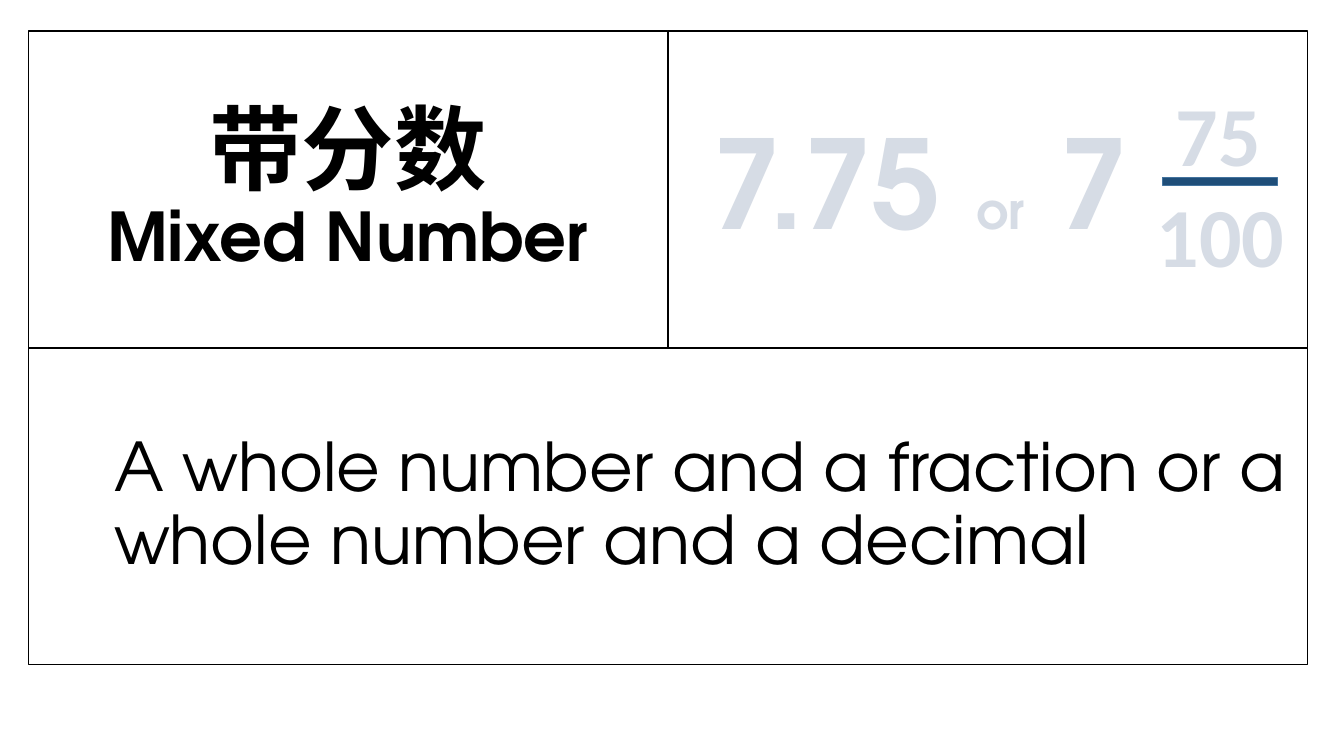
"""Build a vocabulary card for the term "mixed number"."""
from pptx import Presentation
from pptx.dml.color import RGBColor
from pptx.enum.shapes import MSO_SHAPE
from pptx.enum.text import MSO_ANCHOR, MSO_AUTO_SIZE, PP_ALIGN
from pptx.util import Pt

SCALE = 914400 / 100.8
BLACK = RGBColor(0x00, 0x00, 0x00)
PALE = RGBColor(0xD6, 0xDC, 0xE5)
NAVY = RGBColor(0x1F, 0x4E, 0x79)
BLUE = RGBColor(0x43, 0x73, 0x9E)
SANS, GEO = "Calibri", "TeX Gyre Adventor"
LEFT, TOP, WIDE, HIGH = 28, 31, 640, 317


def px(num):
    return round(num * SCALE)


def write(para, runs, color, bold, dent, align, lead):
    props = para._p.get_or_add_pPr()
    props.set("marL", str(px(dent)))
    props.set("indent", "0")
    form = {"alignment": align, "line_spacing": lead, "space_before": Pt(0)}
    for key, value in form.items():
        setattr(para, key, value)
    for text, size, face in runs:
        if text == "\n":
            para.add_line_break()
            continue
        run = para.add_run()
        run.text = text
        look = {"size": Pt(size), "name": face, "bold": bold}
        for key, value in look.items():
            setattr(run.font, key, value)
        run.font.color.rgb = color


deck = Presentation()
deck.slide_width, deck.slide_height = px(1344), px(756)
slide = deck.slides.add_slide(deck.slide_layouts.get_by_name("Comparison"))

term = [("带分数", 66, SANS), ("\n", 0, ""), ("Mixed Number", 48, GEO)]
sample = [("7.75 ", 88, GEO), ("or", 36, GEO), (" 7", 88, GEO)]
sense = [("A whole number and a fraction or a whole number and a decimal", 48, GEO)]
cells = {
    0: (LEFT, TOP, WIDE, term, BLACK, True, 0, PP_ALIGN.CENTER),
    1: (LEFT + WIDE, TOP, WIDE, sample, PALE, True, 34, PP_ALIGN.LEFT),
    3: (LEFT, TOP + HIGH, 2 * WIDE, sense, BLACK, False, 76, PP_ALIGN.LEFT),
}
for cell in list(slide.placeholders):
    index = cell.placeholder_format.idx
    if index not in cells:
        cell.element.getparent().remove(cell.element)
        continue
    left, top, width, runs, color, bold, dent, align = cells[index]
    place = {"left": px(left), "top": px(top), "width": px(width), "height": px(HIGH)}
    for key, value in place.items():
        setattr(cell, key, value)
    cell.line.color.rgb = BLACK
    cell.line.width = Pt(0.75)
    frame = cell.text_frame
    modes = {"auto_size": MSO_AUTO_SIZE.NONE, "word_wrap": True,
             "vertical_anchor": MSO_ANCHOR.MIDDLE}
    for key, value in modes.items():
        setattr(frame, key, value)
    write(frame.paragraphs[0], runs, color, bold, dent, align, 0.9)

group = slide.shapes.add_group_shape()
box = group.shapes.add_textbox(px(1128), px(78), px(206), px(244))
frame = box.text_frame
frame.word_wrap = True
paras = [frame.paragraphs[0], frame.add_paragraph()]
for para, text, dent in zip(paras, ("75", "100"), (38, 19)):
    write(para, [(text, 60, SANS)], PALE, True, dent, PP_ALIGN.LEFT, 1.0)

bar = group.shapes.add_shape(MSO_SHAPE.MATH_MINUS, px(1142), px(164), px(156), px(35))
bar.shadow.inherit = False
bar.fill.solid()
bar.fill.fore_color.rgb = NAVY
bar.line.color.rgb = BLUE
bar.line.width = Pt(1)

deck.save("out.pptx")
